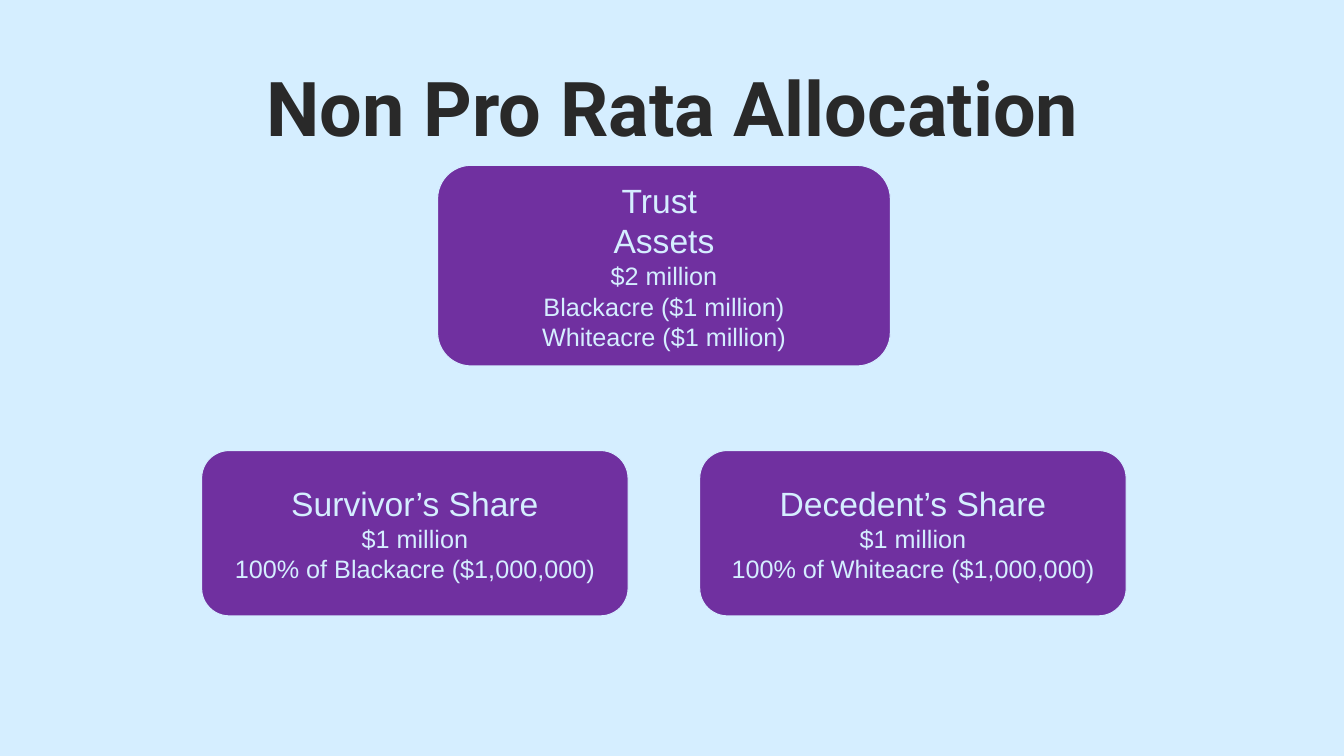
from lxml.etree import SubElement
from pptx import Presentation
from pptx.dml.color import RGBColor
from pptx.enum.shapes import MSO_CONNECTOR as CONN, MSO_SHAPE as SHAPE
from pptx.enum.text import MSO_ANCHOR as ANCHOR, MSO_AUTO_SIZE as FIT, PP_ALIGN as ALIGN
from pptx.oxml.ns import qn
from pptx.util import Inches, Pt

PALE_BLUE = RGBColor(0xD5, 0xEE, 0xFF)
PURPLE = RGBColor(0x70, 0x30, 0xA0)
CHARCOAL = RGBColor(0x29, 0x29, 0x29)

CENTER_X = 6.585
BRANCH_DX = 2.47
TRUST_TOP, TRUST_H = 1.64, 1.99
SHARE_TOP = 4.47


class AllocationSlide:
    title_font, body_font = "Roboto", "Arial"

    def __init__(self, prs):
        self.s = prs.slides.add_slide(prs.slide_layouts[5])
        fill = self.s.background.fill
        fill.solid()
        fill.fore_color.rgb = PALE_BLUE

    def format(self, p, font, size, color, bold=False):
        p.alignment = ALIGN.CENTER
        for r in p.runs:
            r.font.name, r.font.size, r.font.bold = font, Pt(size), bold
            r.font.color.rgb = color

    def title(self, text):
        sp = self.s.shapes.title
        sp.left, sp.top = Inches(0.67), Inches(0.3)
        sp.width, sp.height = Inches(12), Inches(1.25)
        tf = sp.text_frame
        tf.text = text
        tf.vertical_anchor, tf.auto_size = ANCHOR.BOTTOM, FIT.NONE
        self.format(tf.paragraphs[0], self.title_font, 54, CHARCOAL, bold=True)

    def branch(self, side):
        """Elbow from a share box up to the trust box; side is -1 (left) or 1 (right)."""
        rise = SHARE_TOP - TRUST_TOP - TRUST_H
        mid_x = CENTER_X + side * BRANCH_DX / 2
        mid_y = SHARE_TOP - rise / 2
        # The elbow is laid out sideways, then turned a quarter about its middle.
        line = self.s.shapes.add_connector(
            CONN.ELBOW,
            Inches(mid_x + side * rise / 2), Inches(mid_y - BRANCH_DX / 2),
            Inches(mid_x - side * rise / 2), Inches(mid_y + BRANCH_DX / 2))
        line.line.color.rgb, line.line.width = PALE_BLUE, Pt(2.25)
        props = line._element.spPr
        props.find(qn("a:xfrm")).set("rot", str(side * 90 % 360 * 60000))
        guides = props.find(qn("a:prstGeom")).find(qn("a:avLst"))
        SubElement(guides, qn("a:gd"), name="adj1", fmla="val 14800")
        SubElement(props, qn("a:effectLst"))

    def box(self, center_x, top, width, height, heading, details):
        sp = self.s.shapes.add_shape(
            SHAPE.ROUNDED_RECTANGLE, Inches(center_x - width / 2), Inches(top),
            Inches(width), Inches(height))
        sp.shadow.inherit = False
        sp.fill.solid()
        sp.fill.fore_color.rgb = PURPLE
        sp.line.color.rgb, sp.line.width = PALE_BLUE, Pt(0.75)
        tf = sp.text_frame
        tf.word_wrap, tf.vertical_anchor = False, ANCHOR.MIDDLE
        tf.text = "\n".join(heading + details)
        for i, p in enumerate(tf.paragraphs):
            self.format(p, self.body_font, 24 if i < len(heading) else 18, PALE_BLUE)


def main():
    prs = Presentation()
    prs.slide_width, prs.slide_height = Inches(13.33), Inches(7.5)
    slide = AllocationSlide(prs)
    slide.title("Non Pro Rata Allocation")
    for side in (1, -1):
        slide.branch(side)
    slide.box(CENTER_X, TRUST_TOP, 4.49, TRUST_H, ["Trust ", "Assets"],
              ["$2 million", "Blackacre ($1 million)", "Whiteacre ($1 million)"])
    for side, owner, land in ((-1, "Survivor", "Blackacre"), (1, "Decedent", "Whiteacre")):
        slide.box(CENTER_X + side * BRANCH_DX, SHARE_TOP, 4.23, 1.64, [f"{owner}’s Share"],
                  ["$1 million", f"100% of {land} ($1,000,000)"])
    prs.save("out.pptx")


if __name__ == "__main__":
    main()
